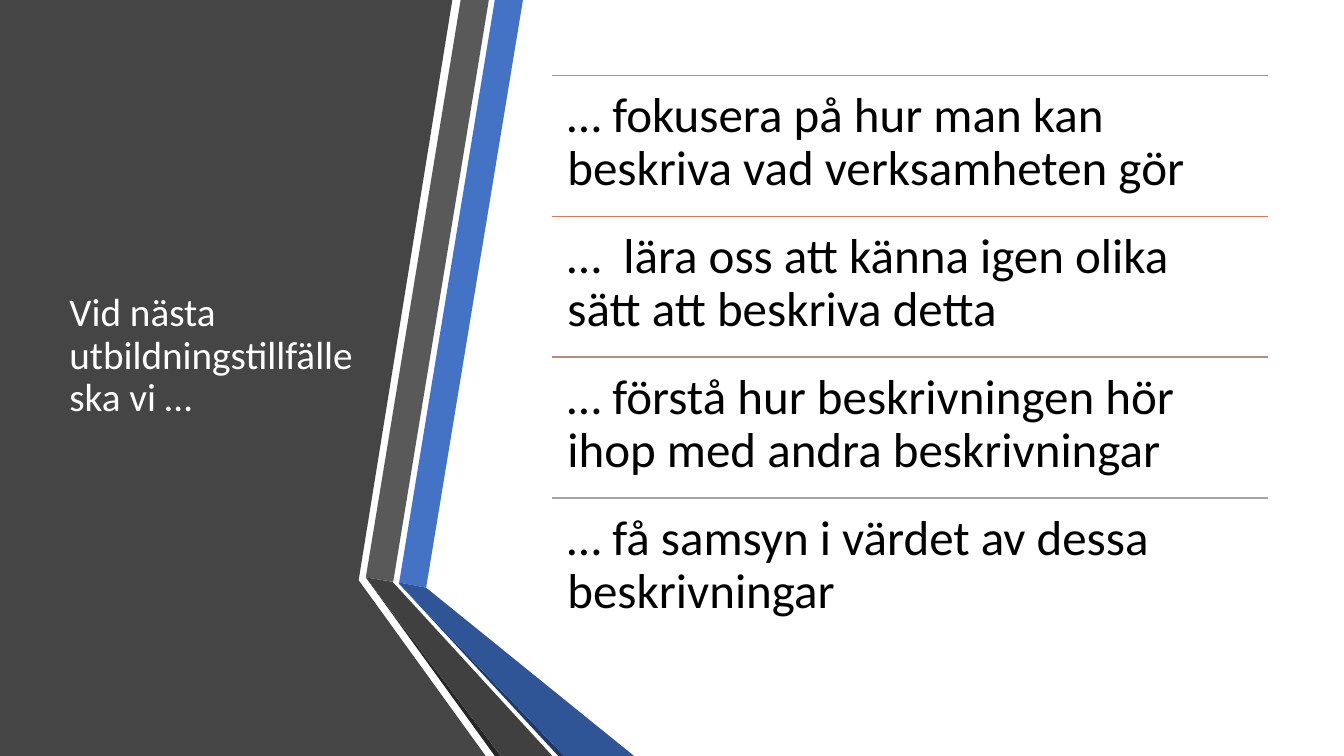
from lxml import etree
from pptx import Presentation
from pptx.dml.color import RGBColor
from pptx.enum.shapes import MSO_CONNECTOR
from pptx.enum.text import MSO_ANCHOR
from pptx.oxml.ns import qn
from pptx.util import Cm, Pt

STRAIGHT = MSO_CONNECTOR.STRAIGHT
TOP, MIDDLE = MSO_ANCHOR.TOP, MSO_ANCHOR.MIDDLE

WHITE = RGBColor(0xFF, 0xFF, 0xFF)
BLACK = RGBColor(0x00, 0x00, 0x00)
CHARCOAL = RGBColor(0x45, 0x45, 0x45)
GRAY = RGBColor(0x59, 0x59, 0x59)
DARK_GRAY = RGBColor(0x40, 0x40, 0x40)
GRAY_SHADE = RGBColor(0x26, 0x26, 0x26)
BLUE = RGBColor(0x44, 0x72, 0xC4)
DARK_BLUE = RGBColor(0x2F, 0x55, 0x97)
NAVY = RGBColor(0x20, 0x38, 0x64)
ORANGE = RGBColor(0xED, 0x7D, 0x31)
COPPER = RGBColor(0xD1, 0x7B, 0x5C)
ROSE = RGBColor(0xB9, 0x8A, 0x82)
SILVER = RGBColor(0xA5, 0xA5, 0xA5)

WIDTH, HEIGHT = 33.87, 19.05

RIBBON = [
    (CHARCOAL, [(0, 0), (11.4, 0), (9.04, 14.62), (12.24, HEIGHT), (0, HEIGHT)]),
    (BLUE, [(10.06, 14.68), (10.74, 14.81), (13.18, 0), (12.47, 0)]),
    (GRAY, [(12.32, 0), (11.61, 0), (9.22, 14.55), (9.91, 14.66)]),
    (GRAY_SHADE, [(9.22, 14.55), (12.47, HEIGHT), (12.62, HEIGHT)]),
    (NAVY, [(10.06, 14.71), (14.07, HEIGHT), (14.22, HEIGHT)]),
    (DARK_BLUE, [(10.06, 14.71), (14.22, HEIGHT), (15.98, HEIGHT),
                 (10.74, 14.81), (10.06, 14.68)]),
    (DARK_GRAY, [(13.92, HEIGHT), (10.03, 14.81), (9.88, 14.66),
                 (9.22, 14.55), (12.62, HEIGHT)]),
]

GOALS = [
    (ORANGE, "… fokusera på hur man kan beskriva vad verksamheten gör"),
    (COPPER, "…  lära oss att känna igen olika sätt att beskriva detta"),
    (ROSE, "… förstå hur beskrivningen hör ihop med andra beskrivningar"),
    (SILVER, "… få samsyn i värdet av dessa beskrivningar"),
]
GOAL_LEFT, GOAL_TOP, GOAL_WIDTH, GOAL_PITCH = 13.92, 1.9, 18.03, 3.55


class SlideBuilder:
    font_name = "Calibri"
    line_spacing = 0.9

    def __init__(self, slide):
        self.shapes = slide.shapes

    def polygon(self, color, points):
        corners = [(Cm(x), Cm(y)) for x, y in points]
        builder = self.shapes.build_freeform(*corners[0])
        builder.add_line_segments(corners[1:], close=True)
        facet = builder.convert_to_shape()
        facet.shadow.inherit = False
        facet.fill.solid()
        facet.fill.fore_color.rgb = color
        facet.line.fill.background()

    def rule(self, left, top, width, color):
        rule = self.shapes.add_connector(
            STRAIGHT, Cm(left), Cm(top), Cm(left + width), Cm(top))
        rule.line.color.rgb = color
        rule.line.width = Pt(1)
        etree.SubElement(rule._element.spPr, qn("a:effectLst"))

    def text(self, words, left, top, width, height, size, color, anchor, inset):
        box = self.shapes.add_textbox(Cm(left), Cm(top), Cm(width), Cm(height))
        frame = box.text_frame
        frame.word_wrap = True
        frame.vertical_anchor = anchor
        frame.margin_left = frame.margin_right = Cm(inset[0])
        frame.margin_top = frame.margin_bottom = Cm(inset[1])
        paragraph = frame.paragraphs[0]
        paragraph.text = words
        paragraph.line_spacing = self.line_spacing
        paragraph.font.name = self.font_name
        paragraph.font.size = Pt(size)
        paragraph.font.color.rgb = color


def main():
    deck = Presentation()
    deck.slide_width, deck.slide_height = Cm(WIDTH), Cm(HEIGHT)
    builder = SlideBuilder(deck.slides.add_slide(deck.slide_layouts[6]))

    for color, points in RIBBON:
        builder.polygon(color, points)

    builder.text("Vid nästa utbildningstillfälle ska vi …",
                 1.5, 1.9, 7.72, 14.17, 28, WHITE, MIDDLE, (0.25, 0.13))

    for row, (color, goal) in enumerate(GOALS):
        top = GOAL_TOP + row * GOAL_PITCH
        builder.rule(GOAL_LEFT, top, GOAL_WIDTH, color)
        builder.text(goal, GOAL_LEFT, top, GOAL_WIDTH, GOAL_PITCH,
                     35, BLACK, TOP, (0.38, 0.38))

    deck.save("out.pptx")


if __name__ == "__main__":
    main()
